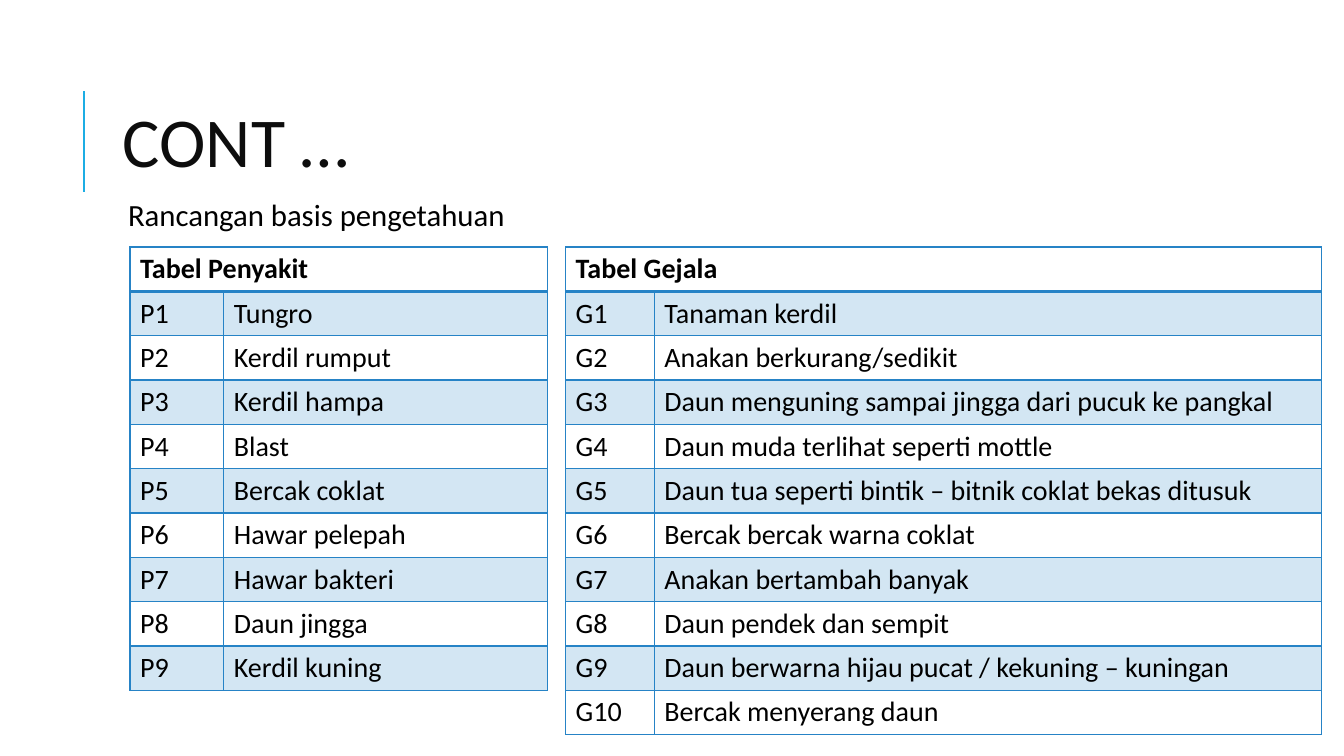
from lxml import etree
from pptx import Presentation
from pptx.dml.color import RGBColor
from pptx.enum.shapes import MSO_CONNECTOR
from pptx.enum.text import MSO_ANCHOR
from pptx.oxml.ns import qn
from pptx.util import Inches, Pt

STRAIGHT = MSO_CONNECTOR.STRAIGHT
TOP, MIDDLE = MSO_ANCHOR.TOP, MSO_ANCHOR.MIDDLE

BLACK = RGBColor(0x00, 0x00, 0x00)
TITLE_INK = RGBColor(0x0D, 0x0D, 0x0D)
ACCENT = RGBColor(0x1C, 0xAD, 0xE4)
TABLE_BLUE = RGBColor(0x26, 0x83, 0xC6)

BAND_OPACITY = 20
ROW_HEIGHT = 0.44
TABLE_TOP = 2.45

DISEASES = ["Tungro", "Kerdil rumput", "Kerdil hampa", "Blast", "Bercak coklat",
            "Hawar pelepah", "Hawar bakteri", "Daun jingga", "Kerdil kuning"]
SYMPTOMS = ["Tanaman kerdil", "Anakan berkurang/sedikit",
            "Daun menguning sampai jingga dari pucuk ke pangkal",
            "Daun muda terlihat seperti mottle",
            "Daun tua seperti bintik – bitnik coklat bekas ditusuk",
            "Bercak bercak warna coklat", "Anakan bertambah banyak",
            "Daun pendek dan sempit",
            "Daun berwarna hijau pucat / kekuning – kuningan",
            "Bercak menyerang daun"]


def apply_format(target, values):
    """Set each attribute of target named in values."""
    for name, value in values.items():
        setattr(target, name, value)


class KnowledgeSlide:
    font = "Calibri"

    def __init__(self, slide):
        self.slide = slide

    def add_words(self, frame, text, size, color, bold=False):
        paragraph = frame.paragraphs[0]
        run = paragraph.add_run()
        run.text = text
        apply_format(run.font, {"name": self.font, "size": Pt(size), "bold": bold})
        run.font.color.rgb = color
        return paragraph

    def text(self, box, text, size, color, frame_format, paragraph_format):
        frame = self.slide.shapes.add_textbox(*map(Inches, box)).text_frame
        apply_format(frame, {"word_wrap": True, **frame_format})
        apply_format(self.add_words(frame, text, size, color), paragraph_format)

    def line(self, start, end, color, width):
        line = self.slide.shapes.add_connector(
            STRAIGHT, *map(Inches, start + end))
        line.line.color.rgb = color
        line.line.width = Pt(width)
        etree.SubElement(line._element.spPr, qn("a:effectLst"))

    def borders(self, cell, bottom_width):
        properties = cell._tc.get_or_add_tcPr()
        for side in "LRTB":
            width = Pt(bottom_width if side == "B" else 1)
            edge = etree.SubElement(properties, qn(f"a:ln{side}"), w=str(width))
            fill = etree.SubElement(edge, qn("a:solidFill"))
            etree.SubElement(fill, qn("a:srgbClr"), val=str(TABLE_BLUE))

    def band(self, cell):
        """Fill a cell with the translucent table colour."""
        cell.fill.solid()
        cell.fill.fore_color.rgb = TABLE_BLUE
        color = cell._tc.tcPr.find(f"{qn('a:solidFill')}/{qn('a:srgbClr')}")
        etree.SubElement(color, qn("a:alpha"), val=str(BAND_OPACITY * 1000))

    def code_table(self, left, widths, heading, prefix, entries):
        """Draw a merged heading above numbered codes and their meanings."""
        rows = [(heading, "")]
        rows += [(f"{prefix}{number}", entry)
                 for number, entry in enumerate(entries, 1)]
        table = self.slide.shapes.add_table(
            len(rows), len(widths), Inches(left), Inches(TABLE_TOP),
            Inches(sum(widths)), Inches(ROW_HEIGHT * len(rows))).table
        for column, width in zip(table.columns, widths):
            column.width = Inches(width)
        table.cell(0, 0).merge(table.cell(0, 1))
        for row, values in enumerate(rows):
            table.rows[row].height = Inches(ROW_HEIGHT)
            for column, value in enumerate(values):
                cell = table.cell(row, column)
                self.borders(cell, 1 if row else 2)
                if row % 2:
                    self.band(cell)
                else:
                    cell.fill.background()
                if value:
                    self.add_words(cell.text_frame, value, 20, BLACK, bold=row == 0)


def main():
    prs = Presentation()
    prs.slide_width, prs.slide_height = Inches(13.33), Inches(7.5)
    page = KnowledgeSlide(prs.slides.add_slide(prs.slide_layouts[6]))

    page.line((0.83, 1.9), (0.83, 0.9), ACCENT, 1.5)
    page.text((1.12, 0.64, 10.63, 1.64), "CONT …", 50, TITLE_INK,
              {"vertical_anchor": MIDDLE}, {"line_spacing": 0.8})
    page.text((1.12, 1.93, 10.63, 4.4), "Rancangan basis pengetahuan", 22, BLACK,
              {"vertical_anchor": TOP, "margin_left": Inches(0.15),
               "margin_top": Inches(0.05)},
              {"line_spacing": 0.9, "space_before": Pt(12), "space_after": Pt(2)})
    page.code_table(1.29, (0.93, 3.21), "Tabel Penyakit", "P", DISEASES)
    page.code_table(5.61, (0.88, 6.62), "Tabel Gejala", "G", SYMPTOMS)
    prs.save("out.pptx")


if __name__ == "__main__":
    main()
